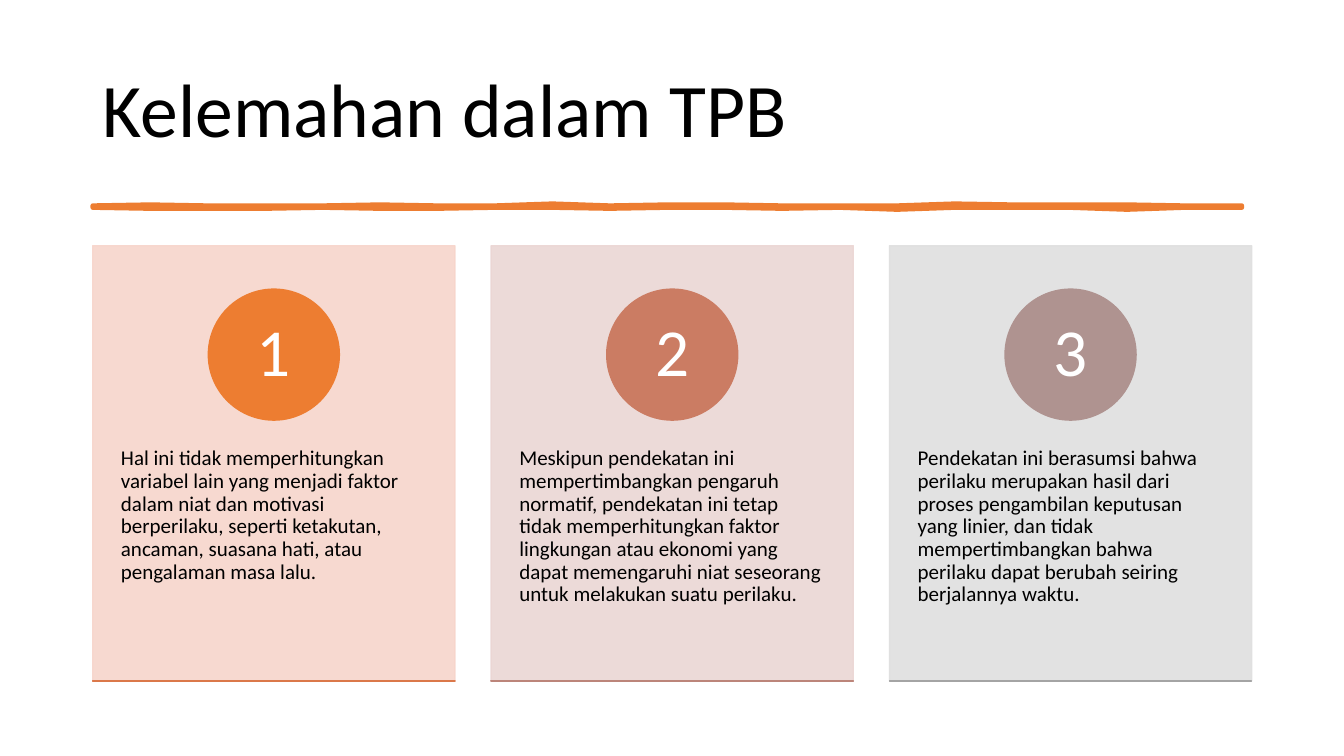
"""Build a slide with a title, a hand-drawn rule and three numbered cards."""
from dataclasses import dataclass

from lxml.etree import SubElement
from pptx import Presentation
from pptx.dml.color import RGBColor
from pptx.enum.shapes import MSO_SHAPE
from pptx.enum.text import MSO_ANCHOR, PP_ALIGN
from pptx.oxml.ns import qn
from pptx.util import Inches, Pt

SLIDE_WIDTH, SLIDE_HEIGHT = Inches(13.33), Inches(7.5)


@dataclass(frozen=True)
class Theme:
    """Colours and type sizes of the slide."""
    font: str = "Calibri"
    ink: str = "000000"
    light: str = "FFFFFF"
    accent: str = "ED7D31"
    title_size: int = 54
    number_size: int = 48
    body_size: int = 15
    line_spacing: float = 0.9
    panels: tuple = ("F7D5CB", "EBD6D4", "DFDFDF")
    badges: tuple = ("ED7D31", "CB7C63", "AF9390")
    edges: tuple = ("DB784A", "BC857A", "A4A4A4")


THEME = Theme()

LEFT, COLUMN, STEP = 6.9, 26.95, 29.64
CARD_TOP, CARD_HEIGHT, EDGE_HEIGHT = 32.5, 57.6, 0.01
BODY_TOP, BODY_HEIGHT = 54.4, 34.53
BADGE_TOP, BADGE_WIDTH, BADGE_HEIGHT = 38.24, 9.75, 17.33
NUMBER_TOP, NUMBER_WIDTH, NUMBER_HEIGHT = 40.77, 6.9, 12.27
RULE_MIDDLE, RULE_WIDTH, WOBBLE = 27.33, 85.5, 0.13

UPPER_WOBBLE = (1, 2, 1, 1, 1, 2, 1, 1, 3, 1, 2, 2, 1, 1, 1, 3, 2, 2, 2, 1, 1)
LOWER_WOBBLE = (1, 2, 2, 2, 1, 2, 2, 1, 1, 2, 1, 1, 2, 1, 3, 1, 1, 1, 3, 1, 1)

WEAKNESSES = (
    "Hal ini tidak memperhitungkan variabel lain yang menjadi faktor dalam niat "
    "dan motivasi berperilaku, seperti ketakutan, ancaman, suasana hati, atau "
    "pengalaman masa lalu.",
    "Meskipun pendekatan ini mempertimbangkan pengaruh normatif, pendekatan ini "
    "tetap tidak memperhitungkan faktor lingkungan atau ekonomi yang dapat "
    "memengaruhi niat seseorang untuk melakukan suatu perilaku.",
    "Pendekatan ini berasumsi bahwa perilaku merupakan hasil dari proses "
    "pengambilan keputusan yang linier, dan tidak mempertimbangkan bahwa "
    "perilaku dapat berubah seiring berjalannya waktu.",
)


def across(percent):
    """Turn a percentage of the slide's width into a length."""
    return round(SLIDE_WIDTH * percent / 100)


def down(percent):
    """Turn a percentage of the slide's height into a length."""
    return round(SLIDE_HEIGHT * percent / 100)


def area(left, top, width, height):
    """Turn four percentages into a place on the slide."""
    return across(left), down(top), across(width), down(height)


def paint(shape, colour, weight=1):
    """Give a shape one colour for its fill and line."""
    shape.shadow.inherit = False
    shape.fill.solid()
    shape.fill.fore_color.rgb = RGBColor.from_string(colour)
    shape.line.color.rgb = RGBColor.from_string(colour)
    shape.line.width = Pt(weight)


def soften(shape, opacity):
    """Make the fill and line of a shape partly transparent."""
    for colour in shape.element.spPr.iter(qn("a:srgbClr")):
        SubElement(colour, qn("a:alpha"), val=str(opacity * 1000))


def add_block(page, kind, place, colour):
    """Add a preset shape in one colour."""
    block = page.shapes.add_shape(kind, *area(*place))
    paint(block, colour)
    return block


def add_text(page, place, text, size, colour, align=PP_ALIGN.LEFT,
             anchor=MSO_ANCHOR.TOP, insets=(0.1, 0.05)):
    """Add a text box with one formatted paragraph."""
    box = page.shapes.add_textbox(*area(*place))
    frame = box.text_frame
    frame.text = text
    frame.word_wrap = True
    frame.vertical_anchor = anchor
    frame.margin_left = frame.margin_right = Inches(insets[0])
    frame.margin_top = frame.margin_bottom = Inches(insets[1])
    para = frame.paragraphs[0]
    para.alignment = align
    para.line_spacing = THEME.line_spacing
    span = para.runs[0]
    span.font.name = THEME.font
    span.font.size = Pt(size)
    span.font.color.rgb = RGBColor.from_string(colour)


def wavy_edge(heights, direction):
    """Return the evenly spaced points of one edge of the rule."""
    step = RULE_WIDTH / (len(heights) - 1)
    return [(across(LEFT + index * step),
             down(RULE_MIDDLE + direction * WOBBLE * height))
            for index, height in enumerate(heights)]


def add_hand_drawn_rule(page):
    """Draw the uneven stroke below the title."""
    outline = wavy_edge(UPPER_WOBBLE, -1) + wavy_edge(LOWER_WOBBLE, 1)[::-1]
    builder = page.shapes.build_freeform(*outline[0])
    builder.add_line_segments(outline[1:], close=True)
    stroke = builder.convert_to_shape()
    paint(stroke, THEME.accent, 3.25)
    SubElement(stroke.element.spPr.find(qn("a:ln")), qn("a:round"))


def add_card(page, index, text):
    """Add one numbered card in its grid column."""
    left = LEFT + index * STEP
    panel = add_block(page, MSO_SHAPE.RECTANGLE,
                      (left, CARD_TOP, COLUMN, CARD_HEIGHT), THEME.panels[index])
    soften(panel, 90)
    add_text(page, (left, BODY_TOP, COLUMN, BODY_HEIGHT), text,
             THEME.body_size, THEME.ink, insets=(0.28, 0.36))

    badge_left = left + (COLUMN - BADGE_WIDTH) / 2
    add_block(page, MSO_SHAPE.OVAL,
              (badge_left, BADGE_TOP, BADGE_WIDTH, BADGE_HEIGHT), THEME.badges[index])
    number_left = left + (COLUMN - NUMBER_WIDTH) / 2
    add_text(page, (number_left, NUMBER_TOP, NUMBER_WIDTH, NUMBER_HEIGHT),
             str(index + 1), THEME.number_size, THEME.light,
             PP_ALIGN.CENTER, MSO_ANCHOR.MIDDLE, (0.1, 0.01))

    add_block(page, MSO_SHAPE.RECTANGLE,
              (left, CARD_TOP + CARD_HEIGHT, COLUMN, EDGE_HEIGHT), THEME.edges[index])


def main():
    """Build the slide and save it."""
    deck = Presentation()
    deck.slide_width, deck.slide_height = SLIDE_WIDTH, SLIDE_HEIGHT
    page = deck.slides.add_slide(deck.slide_layouts[6])
    add_text(page, (LEFT, 5.33, 86.25, 19.33), "Kelemahan dalam TPB",
             THEME.title_size, THEME.ink, anchor=MSO_ANCHOR.MIDDLE)
    add_hand_drawn_rule(page)
    for index, text in enumerate(WEAKNESSES):
        add_card(page, index, text)
    deck.save("out.pptx")


if __name__ == "__main__":
    main()
